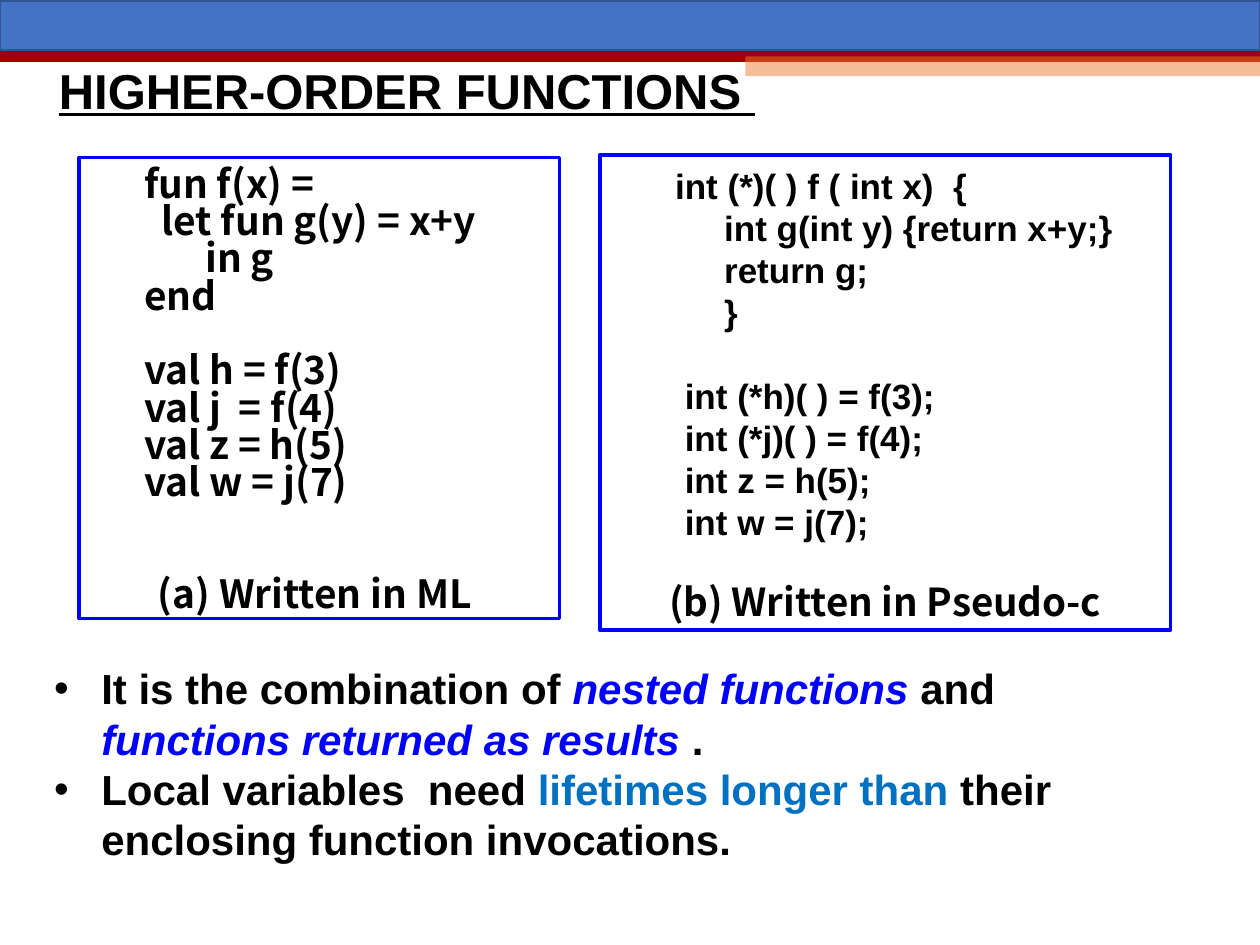
from lxml import etree
from pptx import Presentation, util as u
from pptx.dml.color import RGBColor
from pptx.enum import shapes, text
from pptx.oxml import ns

BLACK = RGBColor(0, 0, 0)
BLUE = RGBColor(0x00, 0x00, 0xFF)
SKY = RGBColor(0x00, 0x70, 0xC0)
RED = RGBColor(0x9E, 0x00, 0x00)
ORANGE = RGBColor(0xED, 0x7D, 0x31)
BAR = RGBColor(0x44, 0x72, 0xC4)
BAR_EDGE = RGBColor(0x32, 0x54, 0x91)

SANS, CJK = "Arial", "Noto Sans CJK SC"


def add_xml(parent, tag, **attributes):
    return etree.SubElement(parent, ns.qn(tag), attributes)


class SlideBuilder:
    """Holds the text style and the current slide."""

    base_font = {"name": SANS, "size": u.Pt(20), "bold": True}

    def __init__(self, slide):
        self.slide = slide

    def rule(self, x1, x2, y, color, width):
        line = self.slide.shapes.add_connector(
            shapes.MSO_CONNECTOR.STRAIGHT, u.Pt(x1), u.Pt(y), u.Pt(x2), u.Pt(y))
        line.line.color.rgb = color
        line.line.width = u.Pt(width)
        add_xml(line._element.spPr, "a:effectLst")

    def bar(self, box, fill, edge=None, opacity=None):
        shape = self.slide.shapes.add_shape(
            shapes.MSO_SHAPE.RECTANGLE, *map(u.Pt, box))
        shape.shadow.inherit = False
        shape.fill.solid()
        shape.fill.fore_color.rgb = fill
        if opacity:
            color = shape._element.spPr.find(".//" + ns.qn("a:srgbClr"))
            add_xml(color, "a:alpha", val=str(opacity * 1000))
        if edge:
            shape.line.color.rgb = edge
            shape.line.width = u.Pt(1)
        else:
            shape.line.fill.background()

    def frame(self, box, edge=None, top=3.6, anchor=text.MSO_ANCHOR.TOP):
        shape = self.slide.shapes.add_textbox(*map(u.Pt, box))
        if edge:
            shape.line.color.rgb = edge
            shape.line.width = u.Pt(2)
        settings = {"word_wrap": True, "margin_top": u.Pt(top),
                    "vertical_anchor": anchor}
        for name, value in settings.items():
            setattr(shape.text_frame, name, value)
        return shape.text_frame

    def paragraph(self, frame, runs, spacing, before=0, left=0, hanging=0,
                  bullet=None, align=text.PP_ALIGN.LEFT, **font):
        first = frame.paragraphs[0]
        paragraph = frame.add_paragraph() if first.runs else first
        layout = {"alignment": align, "line_spacing": spacing,
                  "space_before": u.Pt(before)}
        for name, value in layout.items():
            setattr(paragraph, name, value)
        properties = paragraph._p.get_or_add_pPr()
        properties.set("marL", str(u.Pt(left)))
        properties.set("indent", str(u.Pt(-hanging)))
        if bullet:
            add_xml(properties, "a:buFont", typeface=SANS)
            add_xml(properties, "a:buChar", char=bullet)
        for words, color, italic in runs:
            run = paragraph.add_run()
            run.text = words
            run.font.color.rgb = color
            for name, value in {**self.base_font, "italic": italic, **font}.items():
                setattr(run.font, name, value)
            if run.font.name == CJK:
                add_xml(run._r.get_or_add_rPr(), "a:ea", typeface=CJK)

    def code_box(self, box, top, lines, pitch, caption, caption_gap, font, caption_font):
        frame = self.frame(box, BLUE, top)
        for words, left, before in lines:
            self.paragraph(frame, [(words, BLACK, False)], u.Pt(pitch),
                           before, left, **font)
        self.paragraph(frame, [(caption, BLACK, False)], u.Pt(21.3), caption_gap,
                       align=text.PP_ALIGN.CENTER, **caption_font)


presentation = Presentation()
presentation.slide_width, presentation.slide_height = u.Pt(720), u.Pt(540)
builder = SlideBuilder(presentation.slides.add_slide(presentation.slide_layouts[6]))

# Header band
builder.rule(0, 720, 31.7, RED, 7.5)
builder.bar((426, 32.2, 294, 11.3), ORANGE, opacity=50)
builder.bar((0, 0.5, 720, 28.3), BAR, BAR_EDGE)

# Title
title = builder.frame((26.6, 25.2, 648, 56.2), anchor=text.MSO_ANCHOR.MIDDLE)
builder.paragraph(title, [("HIGHER-ORDER FUNCTIONS ", BLACK, False)], 0.9,
                  size=u.Pt(28), underline=True)

# Code in ML: words, indent, gap above
ml_font = {"name": CJK, "size": u.Pt(22.2)}
builder.code_box(
    (45.2, 90, 274.6, 263.5), 6.6,
    [("fun f(x) =", 30, 0),
     ("let fun g(y) = x+y", 40, 0),
     ("in g", 65, 0),
     ("end", 30, 0),
     ("val h = f(3)", 30, 21.3),
     ("val j  = f(4)", 30, 0),
     ("val z = h(5)", 30, 0),
     ("val w = j(7)", 30, 0)],
    21.3, "(a) Written in ML ", 42.6, ml_font, ml_font)

# Code in pseudo-C
builder.code_box(
    (342.7, 88.5, 326.3, 271.5), 5.4,
    [("int (*)( ) f ( int x)  {", 36, 0),
     ("int g(int y) {return x+y;}", 64, 0),
     ("return g;", 64, 0),
     ("}", 64, 0),
     ("int (*h)( ) = f(3);", 41.5, 24),
     ("int (*j)( ) = f(4);", 41.5, 0),
     ("int z = h(5);", 41.5, 0),
     ("int w = j(7);", 41.5, 0)],
    24, "(b) Written in Pseudo-c", 25.5, {}, {"name": CJK, "size": u.Pt(22)})

# Key points
points = builder.frame((23.8, 375.1, 651, 123.8))
for runs in (
    [("It is the combination of ", BLACK, False),
     ("nested functions", BLUE, True),
     (" and ", BLACK, False),
     ("functions returned as results ", BLUE, True),
     (".", BLACK, False)],
    [("Local variables  need ", BLACK, False),
     ("lifetimes longer than ", SKY, False),
     ("their enclosing function invocations.", BLACK, False)],
):
    builder.paragraph(points, runs, u.Pt(28.8), left=27, hanging=27,
                      bullet="•", size=u.Pt(24))

presentation.save("out.pptx")
